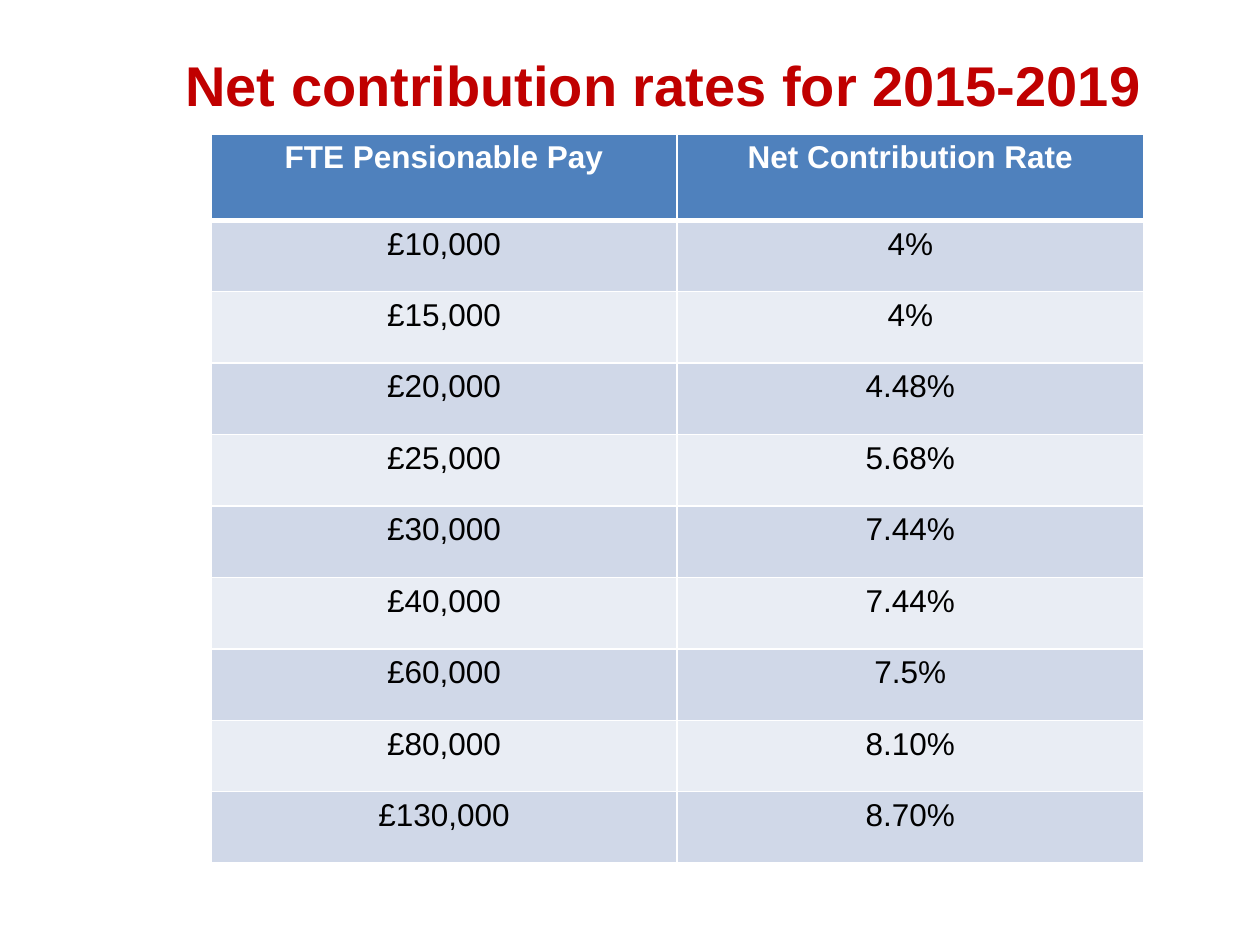
"""Build a slide with a table of net contribution rates."""
from dataclasses import dataclass

from lxml import etree
from pptx import Presentation
from pptx import util as u
from pptx.dml.color import RGBColor
from pptx.enum import text
from pptx.oxml import ns


@dataclass(frozen=True)
class Theme:
    font: str = "Arial"
    title_size: int = 32
    cell_size: int = 18
    title: str = "C00000"
    header: str = "4F81BD"
    bands: tuple = ("D0D8E8", "E9EDF4")
    light: str = "FFFFFF"
    dark: str = "000000"


THEME = Theme()
HEADINGS = ("FTE Pensionable Pay", "Net Contribution Rate")
RATES = (
    ("£10,000", "4%"),
    ("£15,000", "4%"),
    ("£20,000", "4.48%"),
    ("£25,000", "5.68%"),
    ("£30,000", "7.44%"),
    ("£40,000", "7.44%"),
    ("£60,000", "7.5%"),
    ("£80,000", "8.10%"),
    ("£130,000", "8.70%"),
)


def write_text(frame, wording, *, size, color, bold=False):
    paragraph = frame.paragraphs[0]
    paragraph.alignment = text.PP_ALIGN.CENTER
    run = paragraph.add_run()
    run.text = wording
    run.font.name = THEME.font
    run.font.size = u.Pt(size)
    run.font.bold = bold
    run.font.color.rgb = RGBColor.from_string(color)


def add_title(slide, wording):
    title = slide.shapes.title
    title.left, title.top = u.Cm(3.35), u.Cm(0.76)
    title.width, title.height = u.Cm(20.4), u.Cm(4.29)
    frame = title.text_frame
    frame.word_wrap = True
    frame.auto_size = text.MSO_AUTO_SIZE.NONE
    frame.vertical_anchor = text.MSO_ANCHOR.TOP
    frame.margin_top = u.Cm(0.25)
    frame.margin_right = u.Cm(0.6)
    write_text(frame, wording, size=THEME.title_size, color=THEME.title, bold=True)


def set_borders(cell, **widths):
    properties = cell._tc.get_or_add_tcPr()
    for side, width in widths.items():
        line = etree.SubElement(properties, ns.qn(f"a:ln{side}"), w=str(u.Pt(width)))
        fill = etree.SubElement(line, ns.qn("a:solidFill"))
        etree.SubElement(fill, ns.qn("a:srgbClr"), val=THEME.light)


def format_cell(cell, wording, row):
    is_header = row == 0
    set_borders(cell, L=1, R=1, T=3 if row == 1 else 1, B=3 if is_header else 1)
    fill = THEME.header if is_header else THEME.bands[(row - 1) % 2]
    cell.fill.solid()
    cell.fill.fore_color.rgb = RGBColor.from_string(fill)
    color = THEME.light if is_header else THEME.dark
    write_text(cell.text_frame, wording, size=THEME.cell_size, color=color, bold=is_header)


def add_rates_table(slide, rows):
    header_height, row_height, column_width = u.Cm(1.74), u.Cm(1.44), u.Cm(9.4)
    height = header_height + row_height * (len(rows) - 1)
    table = slide.shapes.add_table(
        len(rows), len(rows[0]), u.Cm(4.25), u.Cm(2.7),
        column_width * len(rows[0]), height,
    ).table
    for column in table.columns:
        column.width = column_width
    for row, values in enumerate(rows):
        table.rows[row].height = row_height if row else header_height
        for column, value in enumerate(values):
            format_cell(table.cell(row, column), value, row)


def main():
    presentation = Presentation()
    presentation.slide_width, presentation.slide_height = u.Cm(25.4), u.Cm(19.05)
    slide = presentation.slides.add_slide(presentation.slide_layouts[5])
    add_title(slide, "Net contribution rates for 2015-2019")
    add_rates_table(slide, (HEADINGS, *RATES))
    presentation.save("out.pptx")


if __name__ == "__main__":
    main()
